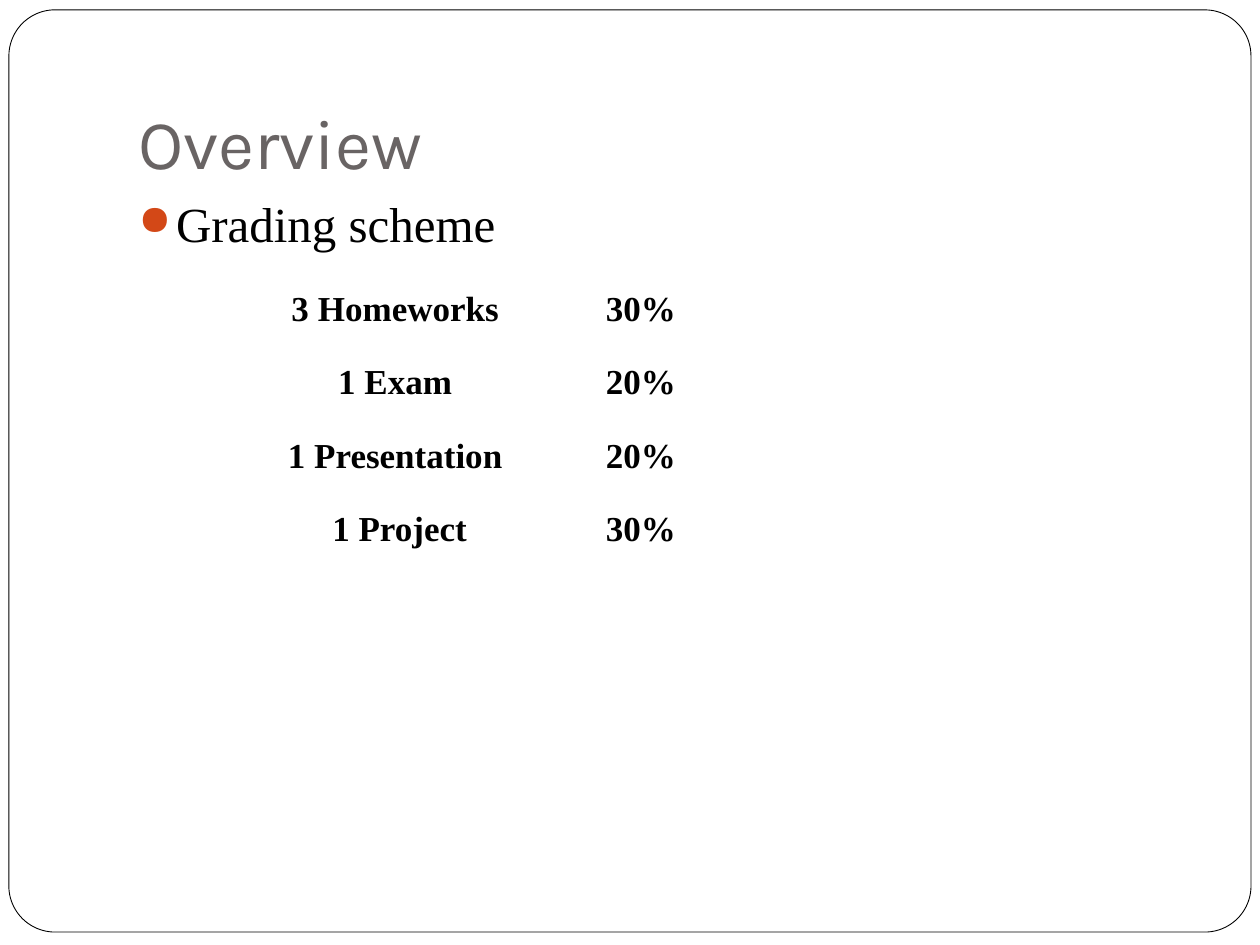
from lxml import etree
from pptx import Presentation
from pptx.dml.color import RGBColor
from pptx.enum.shapes import MSO_SHAPE
from pptx.enum.text import MSO_ANCHOR, PP_ALIGN
from pptx.oxml.ns import qn
from pptx.util import Cm, Pt

ROUNDED_RECTANGLE = MSO_SHAPE.ROUNDED_RECTANGLE
BOTTOM = MSO_ANCHOR.BOTTOM
CENTER = PP_ALIGN.CENTER

WHITE = RGBColor(0xFF, 0xFF, 0xFF)
BLACK = RGBColor(0x00, 0x00, 0x00)
GRAY = RGBColor(0x69, 0x64, 0x64)
ORANGE = RGBColor(0xD3, 0x48, 0x17)

TITLE_FORMAT = {"name": "Karla", "size": Pt(40), "color": GRAY}
BODY_FORMAT = {"name": "Times New Roman", "size": Pt(28), "color": BLACK}
CELL_FORMAT = {"name": "Times New Roman", "size": Pt(20), "color": BLACK, "bold": True}

GRADING = [
    ("3 Homeworks ", "30%"),
    ("1 Exam ", "20%"),
    ("1 Presentation ", "20%"),
    ("1 Project", "30%"),
]
COLUMN_WIDTHS = [Cm(6.35), Cm(3.38)]
ROW_HEIGHTS = [Cm(1.48), Cm(1.48), Cm(1.48), Cm(1.38)]


def write_text(paragraph, text, text_format):
    run = paragraph.add_run()
    run.text = text
    for attribute, value in text_format.items():
        if attribute == "color":
            run.font.color.rgb = value
        else:
            setattr(run.font, attribute, value)


def add_text_frame(slide, top, height):
    shape = slide.shapes.add_textbox(Cm(2.54), top, Cm(21.59), height)
    shape.text_frame.word_wrap = True
    return shape.text_frame


presentation = Presentation()
presentation.slide_width = Cm(25.4)
presentation.slide_height = Cm(19.05)
slide = presentation.slides.add_slide(presentation.slide_layouts[6])

frame = slide.shapes.add_shape(ROUNDED_RECTANGLE, Cm(0.18), Cm(0.2), Cm(25.04), Cm(18.59))
frame.adjustments[0] = 0.05
frame.shadow.inherit = False
frame.fill.solid()
frame.fill.fore_color.rgb = WHITE
frame.line.color.rgb = BLACK
frame.line.width = Pt(0.5)

title = add_text_frame(slide, Cm(0.76), Cm(3.18))
title.vertical_anchor = BOTTOM
title.margin_bottom = Cm(0.25)
write_text(title.paragraphs[0], "Overview", TITLE_FORMAT)

body = add_text_frame(slide, Cm(4.01), Cm(12.7))
paragraph = body.paragraphs[0]
paragraph.line_spacing = 0.8
paragraph.space_before = Pt(5.8)
write_text(paragraph, "Grading scheme", BODY_FORMAT)
properties = paragraph._p.get_or_add_pPr()
properties.set("marL", str(Cm(0.76)))
properties.set("indent", str(Cm(-0.76)))
bullet_color = etree.SubElement(properties, qn("a:buClr"))
etree.SubElement(bullet_color, qn("a:srgbClr"), val=str(ORANGE))
etree.SubElement(properties, qn("a:buSzPct"), val="85000")
etree.SubElement(properties, qn("a:buChar"), char="●")

table = slide.shapes.add_table(
    len(GRADING), len(COLUMN_WIDTHS), Cm(4.88), Cm(5.72), sum(COLUMN_WIDTHS), sum(ROW_HEIGHTS)
).table
table.first_row = False
table.horz_banding = False
for column, width in zip(table.columns, COLUMN_WIDTHS):
    column.width = width
for row, height, texts in zip(table.rows, ROW_HEIGHTS, GRADING):
    row.height = height
    for cell, text in zip(row.cells, texts):
        cell.fill.solid()
        cell.fill.fore_color.rgb = WHITE
        paragraph = cell.text_frame.paragraphs[0]
        paragraph.alignment = CENTER
        paragraph.space_before = Pt(4)
        write_text(paragraph, text, CELL_FORMAT)

presentation.save("out.pptx")
